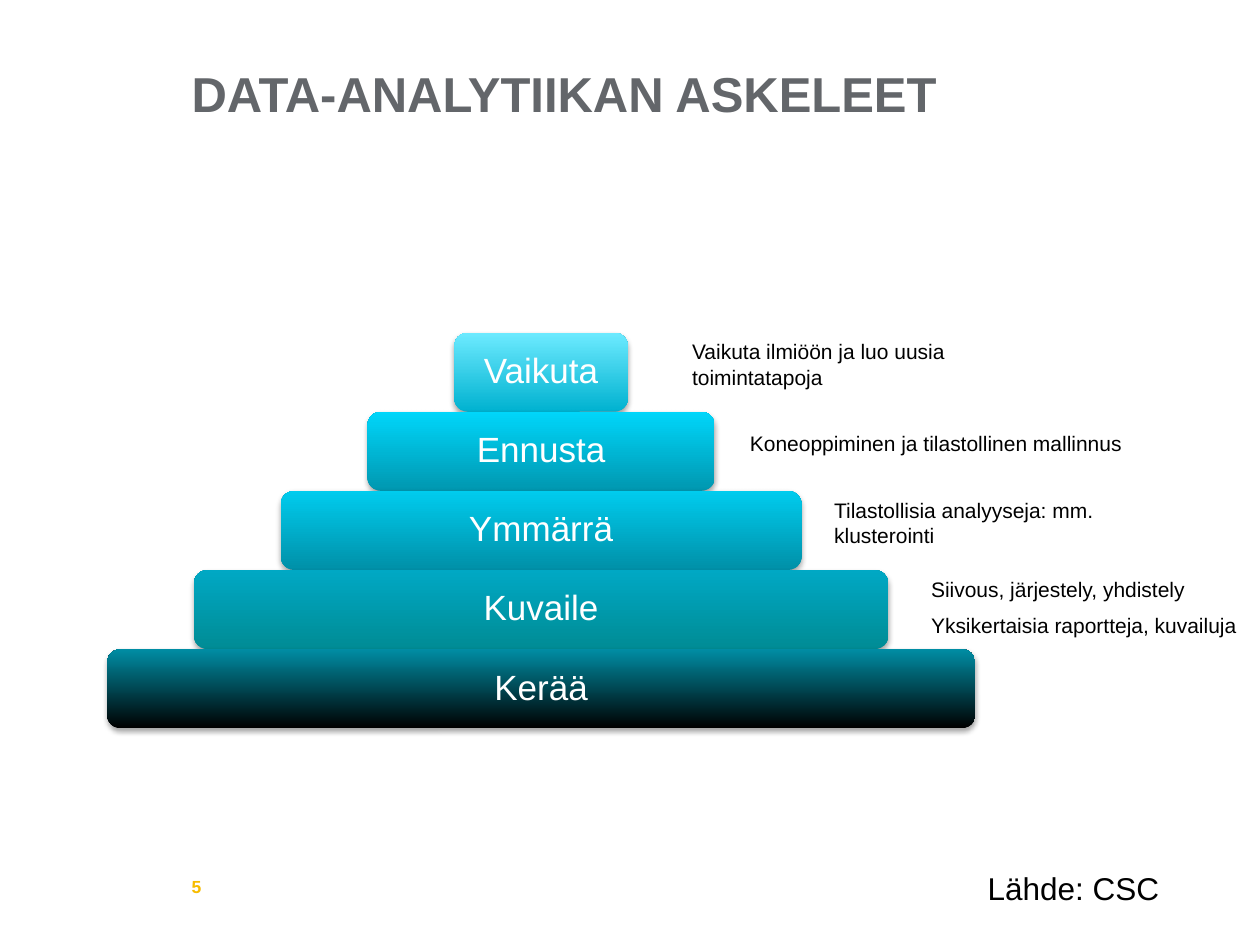
from lxml.etree import SubElement
from pptx import Presentation
from pptx.dml.color import RGBColor
from pptx.enum.shapes import MSO_SHAPE
from pptx.enum.text import MSO_ANCHOR, PP_ALIGN
from pptx.oxml.ns import qn
from pptx.util import Inches, Pt

FONT = "Arial"
GREY = RGBColor(0x63, 0x66, 0x6A)
YELLOW = RGBColor(0xF7, 0xBC, 0x00)
BLACK = RGBColor(0, 0, 0)
WHITE = RGBColor(0xFF, 0xFF, 0xFF)

# Pyramid levels from the top: label, bottom colour, top colour
LEVELS = [
    ("Vaikuta", RGBColor(0x00, 0xB2, 0xD0), RGBColor(0x6D, 0xEA, 0xFF)),
    ("Ennusta", RGBColor(0x00, 0x97, 0xB0), RGBColor(0x00, 0xD6, 0xFA)),
    ("Ymmärrä", RGBColor(0x00, 0x90, 0xA8), RGBColor(0x00, 0xCC, 0xEE)),
    ("Kuvaile", RGBColor(0x00, 0x8C, 0x95), RGBColor(0x00, 0xA8, 0xC4)),
    ("Kerää", BLACK, RGBColor(0x00, 0x8D, 0xA4)),
]

# Notes beside the levels: gap to the level, drop from its top, width, lines
NOTES = [
    (0.41, 0, 2.61, ["Vaikuta ilmiöön ja luo uusia toimintatapoja"]),
    (0.18, 0.1, 3.38, ["Koneoppiminen ja tilastollinen mallinnus"]),
    (0.16, 0, 2.71, ["Tilastollisia analyyseja: mm. klusterointi"]),
    (0.24, 0, 2.71, ["Siivous, järjestely, yhdistely",
                     "Yksikertaisia raportteja, kuvailuja"]),
]


def fill_text(tf, lines, size, color, bold=False, margins=(0.1, 0.05),
              gap=0, **formats):
    tf.word_wrap = True
    tf.margin_left = tf.margin_right = Inches(margins[0])
    tf.margin_top = tf.margin_bottom = Inches(margins[1])
    for i, line in enumerate(lines):
        p = tf.add_paragraph() if i else tf.paragraphs[0]
        if i:
            p.space_before = Pt(gap)
        for name, value in formats.items():
            setattr(p, name, value)
        r = p.add_run()
        r.text = line
        for name, value in {"name": FONT, "size": Pt(size), "bold": bold}.items():
            setattr(r.font, name, value)
        r.font.color.rgb = color


def add_text(s, box, lines, size, color, anchor=MSO_ANCHOR.TOP, **options):
    tf = s.shapes.add_textbox(*map(Inches, box)).text_frame
    tf.vertical_anchor = anchor
    fill_text(tf, lines, size, color, **options)


def add_soft_shadow(sp):
    sp.shadow.inherit = False
    effects = sp._element.spPr.find(qn("a:effectLst"))
    shadow = SubElement(effects, qn("a:outerShdw"), blurRad=str(Pt(3.1)),
                        dist=str(Pt(1.8)), dir="5400000", rotWithShape="0")
    color = SubElement(shadow, qn("a:srgbClr"), val="000000")
    SubElement(color, qn("a:alpha"), val="35000")


def add_level(s, box, label, bottom, top):
    sp = s.shapes.add_shape(MSO_SHAPE.ROUNDED_RECTANGLE, *map(Inches, box))
    sp.adjustments[0] = 0.17
    sp.fill.gradient()
    sp.fill.gradient_angle = 90
    for stop, color, position in zip(sp.fill.gradient_stops, (bottom, top), (0, 1)):
        stop.color.rgb = color
        stop.position = position
    sp.line.fill.background()
    add_soft_shadow(sp)
    sp.text_frame.vertical_anchor = MSO_ANCHOR.MIDDLE
    fill_text(sp.text_frame, [label], 20, WHITE, margins=(0.18, 0.11),
              alignment=PP_ALIGN.CENTER, line_spacing=0.9)


def add_pyramid(s, left, top, width, height):
    """Centred levels that widen by equal steps, with notes on the right."""
    row = height / len(LEVELS)
    step = width / len(LEVELS)
    for i, level in enumerate(LEVELS):
        w = step * (i + 1)
        add_level(s, (left + (width - w) / 2, top + i * row, w, row), *level)
    for i, (gap, drop, note_width, lines) in enumerate(NOTES):
        edge = left + (width + step * (i + 1)) / 2
        add_text(s, (edge + gap, top + i * row + drop, note_width, row - drop),
                 lines, 12, BLACK, gap=6.5)


def add_title(s, *box):
    add_text(s, box, ["DATA-ANALYTIIKAN ASKELEET"], 28, GREY,
             anchor=MSO_ANCHOR.MIDDLE, bold=True, margins=(0, 0.05))


def add_footer(s, left, top, width, height):
    # Page number and source
    add_text(s, (left, top + 0.1, 0.29, height - 0.1), ["5"], 10, YELLOW,
             bold=True, margins=(0, 0))
    add_text(s, (left + width - 1.83, top, 1.83, 0.4), ["Lähde: CSC"], 18, BLACK)


def main():
    prs = Presentation()
    prs.slide_width, prs.slide_height = Inches(10), Inches(7.5)
    s = prs.slides.add_slide(prs.slide_layouts[6])
    add_title(s, 1.52, 0.11, 8.32, 1.25)
    add_pyramid(s, 0.85, 2.64, 6.89, 3.14)
    add_footer(s, 1.52, 6.85, 8.05, 0.65)
    prs.save("out.pptx")


if __name__ == "__main__":
    main()
